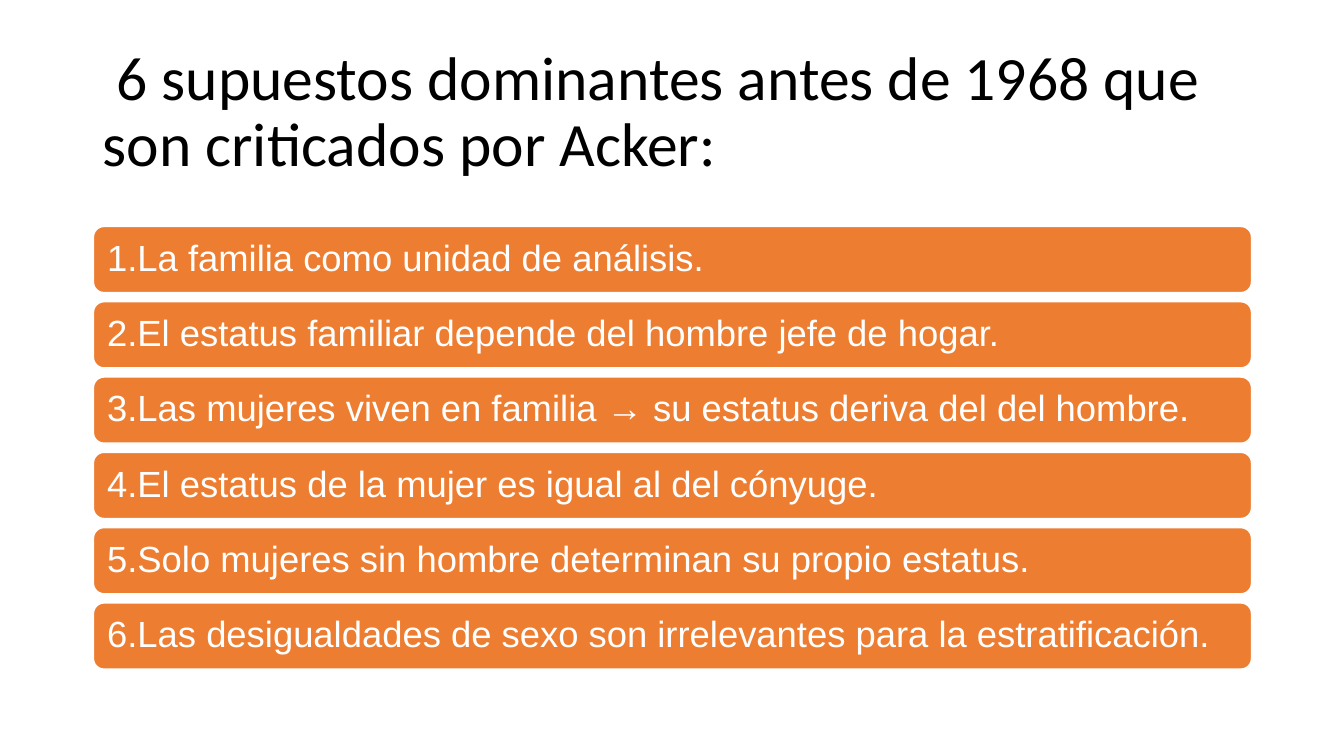
from pptx import Presentation
from pptx.dml.color import RGBColor
from pptx.enum import shapes, text
from pptx.util import Inches, Pt

TITLE = " 6 supuestos dominantes antes de 1968 que son criticados por Acker:"
ASSUMPTIONS = [
    "La familia como unidad de análisis.",
    "El estatus familiar depende del hombre jefe de hogar.",
    "Las mujeres viven en familia → su estatus deriva del del hombre.",
    "El estatus de la mujer es igual al del cónyuge.",
    "Solo mujeres sin hombre determinan su propio estatus.",
    "Las desigualdades de sexo son irrelevantes para la estratificación.",
]

BLACK = RGBColor(0x00, 0x00, 0x00)
WHITE = RGBColor(0xFF, 0xFF, 0xFF)
ORANGE = RGBColor(0xED, 0x7D, 0x31)

LEFT, WIDTH = 0.92, 11.5
BAR_TOP, BAR_HEIGHT, BAR_STEP = 2.24, 0.67, 0.747


def write(box, words, font_name, size, color):
    frame = box.text_frame
    frame.word_wrap = True
    frame.vertical_anchor = text.MSO_ANCHOR.MIDDLE
    para = frame.paragraphs[0]
    para.text = words
    para.alignment = text.PP_ALIGN.LEFT
    para.line_spacing = 0.9
    para.font.name = font_name
    para.font.size = Pt(size)
    para.font.color.rgb = color
    return frame


def add_bar(page, top, words):
    bar = page.shapes.add_shape(
        shapes.MSO_SHAPE.ROUNDED_RECTANGLE,
        Inches(LEFT), Inches(top), Inches(WIDTH), Inches(BAR_HEIGHT))
    bar.shadow.inherit = False
    bar.fill.solid()
    bar.fill.fore_color.rgb = ORANGE
    bar.line.color.rgb = WHITE
    bar.line.width = Pt(2)
    frame = write(bar, words, "Arial", 26, WHITE)
    frame.margin_left = frame.margin_right = Inches(0.11)
    frame.margin_top = frame.margin_bottom = Inches(0.11)


def main():
    deck = Presentation()
    deck.slide_width, deck.slide_height = Inches(13.33), Inches(7.5)
    page = deck.slides.add_slide(deck.slide_layouts[6])

    title = page.shapes.add_textbox(
        Inches(LEFT), Inches(0.4), Inches(WIDTH), Inches(1.45))
    write(title, TITLE, "Calibri", 44, BLACK)

    for index, assumption in enumerate(ASSUMPTIONS):
        add_bar(page, BAR_TOP + index * BAR_STEP, f"{index + 1}.{assumption}")

    deck.save("out.pptx")


if __name__ == "__main__":
    main()
